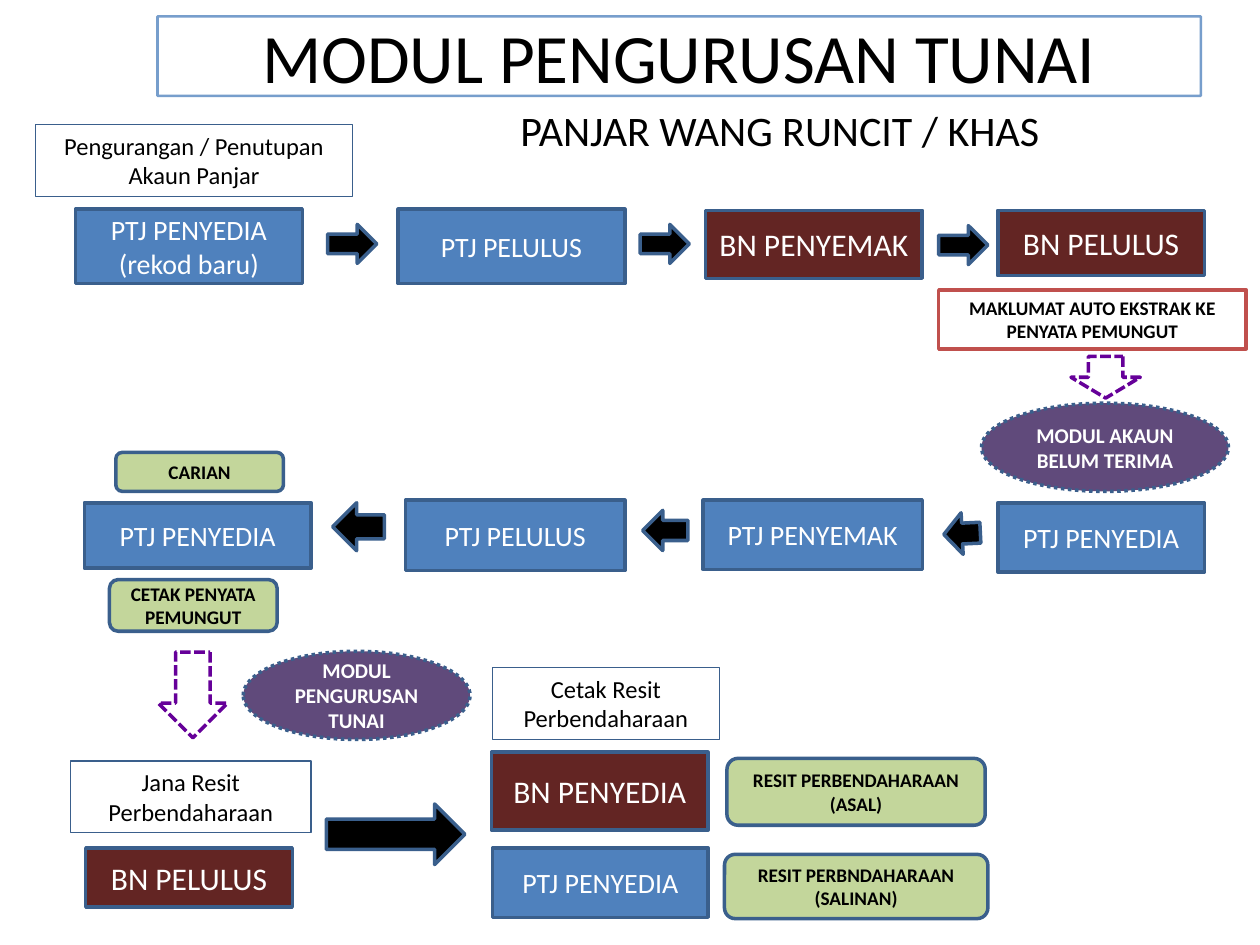
from dataclasses import dataclass
from typing import Optional

from lxml import etree
from pptx import Presentation
from pptx.dml.color import RGBColor
from pptx.enum import dml, shapes, text
from pptx.oxml.ns import qn
from pptx.util import Pt

BLACK = RGBColor(0x00, 0x00, 0x00)
WHITE = RGBColor(0xFF, 0xFF, 0xFF)
BLUE = RGBColor(0x4F, 0x81, 0xBD)
NAVY = RGBColor(0x3A, 0x5F, 0x8C)
MAROON = RGBColor(0x63, 0x25, 0x23)
GREEN = RGBColor(0xC3, 0xD6, 0x9B)
PLUM = RGBColor(0x60, 0x4A, 0x7B)
RED = RGBColor(0xC0, 0x50, 0x4D)
VIOLET = RGBColor(0x66, 0x00, 0x99)
FONT = "Calibri"

KIND = shapes.MSO_SHAPE
DASH = dml.MSO_LINE
ANCHOR = text.MSO_ANCHOR


@dataclass(frozen=True)
class Style:
    kind: shapes.MSO_SHAPE
    fill: Optional[RGBColor]
    line: RGBColor = NAVY
    weight: float = 2
    dash: Optional[dml.MSO_LINE] = None
    size: float = 16
    color: RGBColor = WHITE
    bold: bool = False
    anchor: text.MSO_ANCHOR = ANCHOR.MIDDLE


@dataclass(frozen=True)
class Item:
    style: Style
    left: float
    top: float
    width: float
    height: float
    lines: tuple[str, ...] = ()
    turn: float = 0


TITLE = Style(KIND.RECTANGLE, None, BLUE, 1.5, size=39.6, color=BLACK)
OFFICE = Style(KIND.RECTANGLE, BLUE)
TREASURY = Style(KIND.RECTANGLE, MAROON, size=18)
NOTE = Style(KIND.RECTANGLE, None, weight=0.75, size=14, color=BLACK, anchor=ANCHOR.TOP)
EXTRACT = Style(KIND.RECTANGLE, WHITE, RED, size=11, color=BLACK, bold=True,
                anchor=ANCHOR.TOP)
MODULE = Style(KIND.OVAL, PLUM, dash=DASH.ROUND_DOT, size=12, bold=True)
OUTPUT = Style(KIND.ROUNDED_RECTANGLE, GREEN, size=11, color=BLACK, bold=True)
STEP = Style(KIND.RIGHT_ARROW, BLACK)
HANDOVER = Style(KIND.RIGHT_ARROW, None, VIOLET, dash=DASH.SQUARE_DOT)

ITEMS = [
    # Closing request and its approval, left to right
    Item(NOTE, 20.2, 71.3, 181.4, 41, ("Pengurangan / Penutupan", "Akaun Panjar")),
    Item(OFFICE, 43.2, 119.5, 129.6, 42.5, ("PTJ PENYEDIA", "(rekod baru)")),
    Item(STEP, 187.2, 128.2, 28.1, 22.3),
    Item(OFFICE, 227.5, 119.5, 129.6, 42.5, ("PTJ PELULUS",)),
    Item(STEP, 365.8, 128.2, 28.1, 22.3),
    Item(TREASURY, 403.2, 120.2, 123.8, 38.9, ("BN PENYEMAK",)),
    Item(STEP, 536.4, 128.9, 28.1, 22.3),
    Item(TREASURY, 570.2, 120.2, 118.1, 37.4, ("BN PELULUS",)),
    # Handover to the receivables module
    Item(EXTRACT, 536.4, 165.6, 175.7, 33.8,
         ("MAKLUMAT AUTO EKSTRAK KE PENYATA PEMUNGUT",)),
    Item(HANDOVER, 619.9, 195.8, 23.8, 39.6, turn=90),
    Item(MODULE, 560.9, 230.4, 141.1, 50.4, ("MODUL AKAUN BELUM TERIMA",)),
    # Collector's statement, right to left
    Item(OFFICE, 570.2, 287.3, 118.1, 39.6, ("PTJ PENYEDIA",)),
    Item(STEP, 539.3, 293, 20.9, 23.8, turn=177.2),
    Item(OFFICE, 401.8, 285.8, 125.3, 39.6, ("PTJ PENYEMAK",)),
    Item(STEP, 367.2, 291.6, 25.9, 23, turn=180),
    Item(OFFICE, 231.8, 285.8, 125.3, 40.3, ("PTJ PELULUS",)),
    Item(STEP, 190.1, 287.3, 29.5, 27.4, turn=180),
    Item(OFFICE, 48.2, 287.3, 129.6, 37.4, ("PTJ PENYEDIA",)),
    Item(OUTPUT, 66.2, 258.5, 95.8, 22.3, ("CARIAN",)),
    Item(OUTPUT, 62.6, 331.2, 95.8, 29.5, ("CETAK PENYATA PEMUNGUT",)),
    # Treasury receipts
    Item(HANDOVER, 85.7, 377.3, 49, 39.6, turn=90),
    Item(MODULE, 139, 372.2, 129.6, 50.4, ("MODUL PENGURUSAN TUNAI",)),
    Item(NOTE, 40.3, 434.9, 137.5, 41, ("Jana Resit Perbendaharaan",)),
    Item(TREASURY, 49, 484.6, 118.1, 33.8, ("BN PELULUS",)),
    Item(STEP, 186.5, 459.4, 79.2, 34.6),
    Item(NOTE, 281.5, 381.6, 129.6, 41, ("Cetak Resit Perbendaharaan",)),
    Item(TREASURY, 280.8, 429.8, 123.8, 44.6, ("BN PENYEDIA",)),
    Item(OFFICE, 281.5, 484.6, 123.1, 39.6, ("PTJ PENYEDIA",)),
    Item(OUTPUT, 415.4, 433.4, 147.6, 38.2, ("RESIT PERBENDAHARAAN (ASAL)",)),
    Item(OUTPUT, 414, 488.2, 150.5, 36.7, ("RESIT PERBNDAHARAAN (SALINAN)",)),
]


def write_lines(frame, lines: tuple[str, ...], size: float, color: RGBColor,
                bold: bool = False, align=text.PP_ALIGN.CENTER) -> None:
    frame.word_wrap = True
    for index, line in enumerate(lines):
        para = frame.add_paragraph() if index else frame.paragraphs[0]
        para.alignment = align
        span = para.add_run()
        span.text = line
        span.font.name = FONT
        span.font.size = Pt(size)
        span.font.bold = bold
        span.font.color.rgb = color


def draw(page, item: Item):
    style = item.style
    box = page.shapes.add_shape(style.kind, Pt(item.left), Pt(item.top),
                                Pt(item.width), Pt(item.height))
    box.shadow.inherit = False
    box.rotation = item.turn
    if style.fill is None:
        box.fill.background()
    else:
        box.fill.solid()
        box.fill.fore_color.rgb = style.fill
    box.line.color.rgb = style.line
    box.line.width = Pt(style.weight)
    if style.dash is not None:
        box.line.dash_style = style.dash
    if item.lines:
        box.text_frame.vertical_anchor = style.anchor
        write_lines(box.text_frame, item.lines, style.size, style.color, style.bold)
    return box


def fade_line(box, percent: int) -> None:
    """Set the opacity of the outline."""
    color = box.line._get_or_add_ln().find(f".//{qn('a:srgbClr')}")
    etree.SubElement(color, qn("a:alpha")).set("val", str(percent * 1000))


def main() -> None:
    deck = Presentation()
    deck.slide_width, deck.slide_height = Pt(720), Pt(540)
    page = deck.slides.add_slide(deck.slide_layouts[6])

    title = draw(page, Item(TITLE, 90, 9.4, 596.2, 45.4, ("MODUL PENGURUSAN TUNAI",)))
    fade_line(title, 76)
    subtitle = page.shapes.add_textbox(Pt(290.2), Pt(56.2), Pt(330.5), Pt(36))
    write_lines(subtitle.text_frame, ("PANJAR WANG RUNCIT / KHAS",), 24, BLACK,
                align=text.PP_ALIGN.LEFT)
    for item in ITEMS:
        draw(page, item)

    deck.save("out.pptx")


if __name__ == "__main__":
    main()
